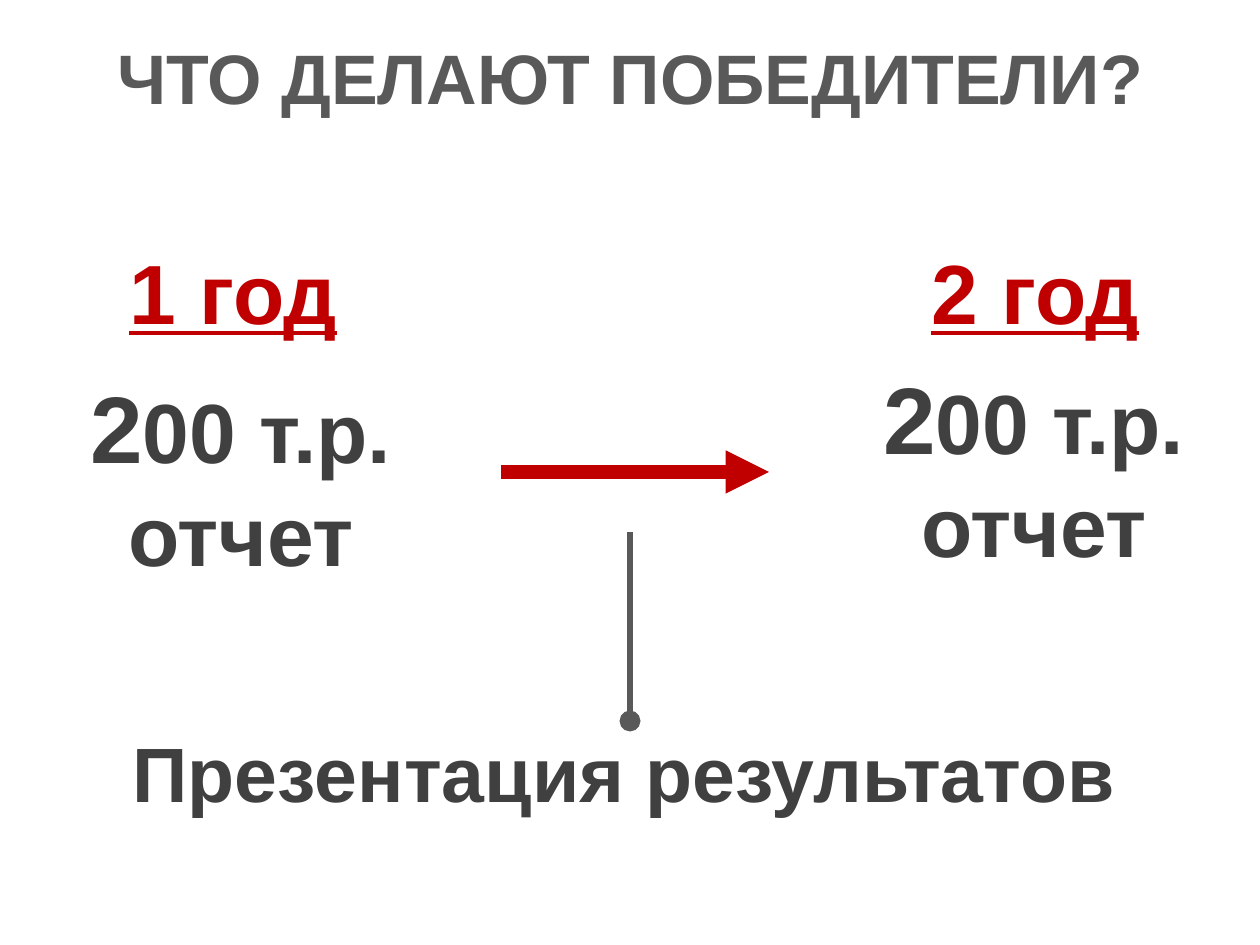
from dataclasses import dataclass

from lxml.etree import SubElement
from pptx import Presentation
from pptx.dml.color import RGBColor
from pptx.enum.shapes import MSO_CONNECTOR
from pptx.enum.text import MSO_ANCHOR, MSO_AUTO_SIZE, PP_ALIGN
from pptx.oxml.ns import qn
from pptx.util import Emu, Pt


@dataclass(frozen=True)
class Theme:
    font: str = "Arial"
    heading: RGBColor = RGBColor(0x59, 0x59, 0x59)
    body: RGBColor = RGBColor(0x40, 0x40, 0x40)
    accent: RGBColor = RGBColor(0xC0, 0x00, 0x00)
    title_size: int = 40
    result_size: int = 44
    year_size: int = 48
    lead_digit_size: int = 54
    arrow_width: float = 8.25
    pointer_width: float = 4


THEME = Theme()
PX_PER_INCH = 126


def px(length):
    return Emu(round(length * 914400 / PX_PER_INCH))


def write_text(box, paragraphs, color, align=PP_ALIGN.CENTER, underline=None):
    """Fill a box; each paragraph is a list of (text, size) runs."""
    frame = box.text_frame
    frame.word_wrap = False
    frame.auto_size = MSO_AUTO_SIZE.SHAPE_TO_FIT_TEXT
    frame.vertical_anchor = MSO_ANCHOR.TOP
    for index, runs in enumerate(paragraphs):
        paragraph = frame.add_paragraph() if index else frame.paragraphs[0]
        paragraph.alignment = align
        for text, size in runs:
            run = paragraph.add_run()
            run.text = text
            run.font.name = THEME.font
            run.font.size = Pt(size)
            run.font.bold = True
            run.font.underline = underline
            run.font.color.rgb = color


def add_title(slide, text, left, top, width, height):
    title = slide.shapes.title
    title.left, title.top = px(left), px(top)
    title.width, title.height = px(width), px(height)
    write_text(title, [[(text, THEME.title_size)]], THEME.heading, PP_ALIGN.LEFT)


def add_label(slide, bounds, paragraphs, color, underline=None):
    label = slide.shapes.add_textbox(*map(px, bounds))
    write_text(label, paragraphs, color, underline=underline)


def add_line(slide, start, end, color, width, end_mark):
    line = slide.shapes.add_connector(
        MSO_CONNECTOR.STRAIGHT, *map(px, (*start, *end)))
    line.line.color.rgb = color
    line.line.width = Pt(width)
    properties = line.line._get_or_add_ln()
    SubElement(properties, qn("a:tailEnd"), type=end_mark)
    SubElement(line._element.spPr, qn("a:effectLst"))


def add_year(slide, year, year_left, amount_left, amount_top):
    add_label(slide, (year_left, 234, 236, 115),
              [[(year, THEME.year_size)]], THEME.accent, underline=True)
    grant = [("2", THEME.lead_digit_size), ("00 т.р.", THEME.year_size)]
    report = [("отчет", THEME.year_size)]
    add_label(slide, (amount_left, amount_top, 330, 229),
              [grant, report], THEME.body)


def main():
    deck = Presentation()
    deck.slide_width, deck.slide_height = px(1260), px(945)
    slide = deck.slides.add_slide(deck.slide_layouts[5])

    add_title(slide, "ЧТО ДЕЛАЮТ ПОБЕДИТЕЛИ?", 105, 28, 1062, 97)

    # The two years and the step between them
    add_year(slide, "1 год", 115, 76, 363)
    add_year(slide, "2 год", 917, 869, 354)
    add_line(slide, (501, 472), (769, 472),
             THEME.accent, THEME.arrow_width, "triangle")

    # What the step requires
    add_line(slide, (630, 532), (630, 721),
             THEME.heading, THEME.pointer_width, "oval")
    add_label(slide, (115, 719, 1040, 106),
              [[("Презентация результатов ", THEME.result_size)]], THEME.body)

    deck.save("out.pptx")


if __name__ == "__main__":
    main()
